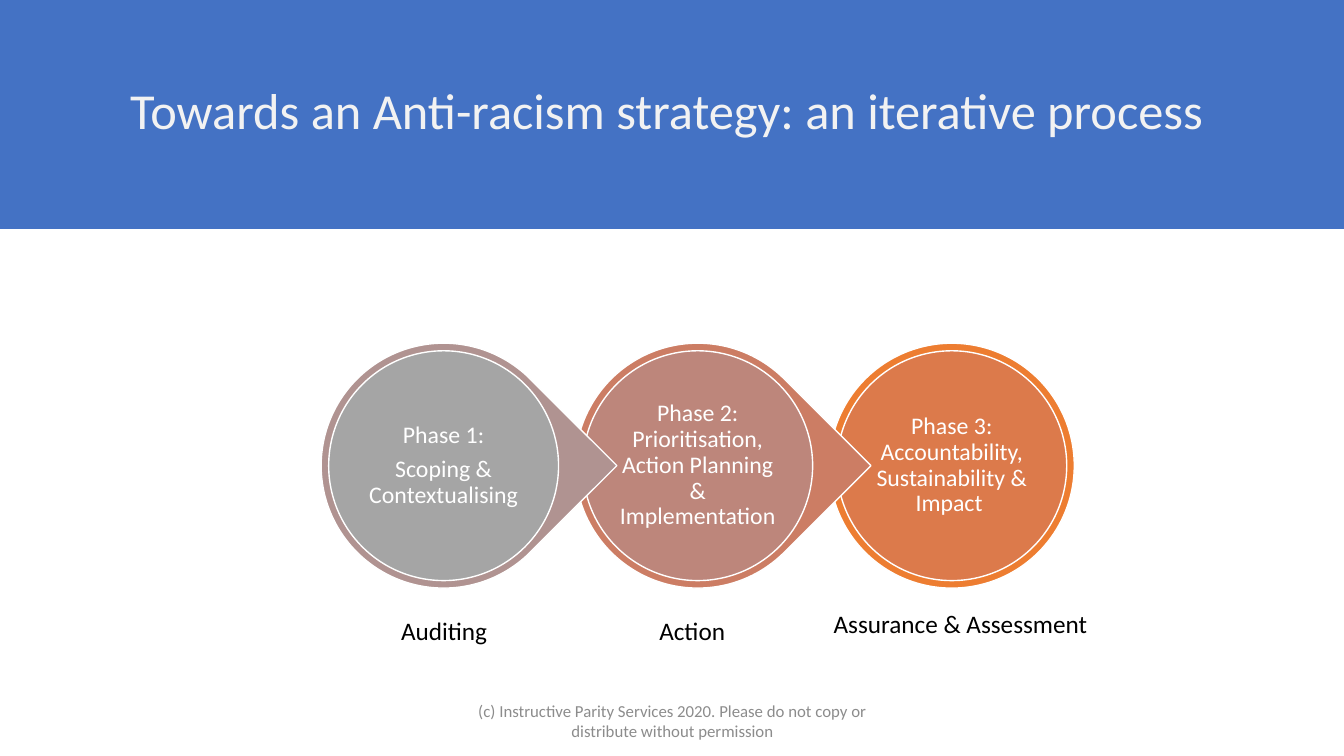
from pptx import Presentation
from pptx.dml.color import RGBColor
from pptx.enum.shapes import MSO_SHAPE
from pptx.enum.text import MSO_ANCHOR, PP_ALIGN
from pptx.util import Pt

RECTANGLE, ELLIPSE, TEARDROP = MSO_SHAPE.RECTANGLE, MSO_SHAPE.OVAL, MSO_SHAPE.TEAR
TOP, MIDDLE = MSO_ANCHOR.TOP, MSO_ANCHOR.MIDDLE
LEFT, CENTER = PP_ALIGN.LEFT, PP_ALIGN.CENTER

BLUE = RGBColor(0x44, 0x72, 0xC4)
OFF_WHITE = RGBColor(0xF2, 0xF2, 0xF2)
WHITE = RGBColor(0xFF, 0xFF, 0xFF)
BLACK = RGBColor(0x00, 0x00, 0x00)
GREY = RGBColor(0x8C, 0x8C, 0x8C)

TITLE = "Towards an Anti-racism strategy: an iterative process "
NOTICE = "(c) Instructive Parity Services 2020. Please do not copy or distribute without permission"
PHASES = [
    (["Phase 1:", "Scoping & Contextualising"], TEARDROP,
     RGBColor(0xB0, 0x93, 0x91), RGBColor(0xA5, 0xA5, 0xA5)),
    (["Phase 2: Prioritisation, Action Planning & Implementation"], TEARDROP,
     RGBColor(0xCC, 0x7D, 0x64), RGBColor(0xBD, 0x86, 0x7B)),
    (["Phase 3: Accountability, Sustainability & Impact "], ELLIPSE,
     RGBColor(0xED, 0x7D, 0x31), RGBColor(0xDC, 0x7A, 0x4B)),
]
CAPTIONS = [
    ("Auditing", (388, 606, 123, 40), True),
    ("Action", (644, 606, 92, 40), False),
    ("Assurance & Assessment", (817, 599, 274, 40), False),
]

EMU_PER_PX = 9144
SLIDE_SIZE = (1333, 750)
BAND_BOX = (0, -1, 1333, 228)
TITLE_BOX = (92, 40, 1150, 145)
NOTICE_BOX = (442, 695, 450, 40)
FIRST_CENTER, CENTER_STEP, CENTER_Y = 440, 252, 462
RING, DISC, LABEL = 243, 228, 163

TITLE_FORMAT = {"size": Pt(36), "name": "Calibri", "color": OFF_WHITE}
PHASE_FORMAT = {"size": Pt(17), "name": "Calibri", "color": WHITE}
NOTICE_FORMAT = {"size": Pt(12), "name": "Calibri", "color": GREY}
CAPTION_FORMAT = {"size": Pt(18), "name": "Calibri", "color": BLACK}
PHASE_PARAGRAPH = {"alignment": CENTER, "line_spacing": 0.9, "space_after": Pt(6)}
PHASE_MARGINS = dict.fromkeys(
    ["margin_left", "margin_top", "margin_right", "margin_bottom"], 2 * EMU_PER_PX)


def emu(box):
    return [px * EMU_PER_PX for px in box]


def square(center_x, side):
    return center_x - side / 2, CENTER_Y - side / 2, side, side


def set_all(target, values):
    for name, value in values.items():
        setattr(target, name, value)


def write(frame, lines, font_format, paragraph_format, frame_format):
    set_all(frame, frame_format)
    for index, line in enumerate(lines):
        paragraph = frame.add_paragraph() if index else frame.paragraphs[0]
        set_all(paragraph, paragraph_format)
        run = paragraph.add_run()
        run.text = line
        for name, value in font_format.items():
            if name == "color":
                run.font.color.rgb = value
            else:
                setattr(run.font, name, value)


def add_filled(slide, preset, box, fill, outline=None):
    figure = slide.shapes.add_shape(preset, *[int(length) for length in emu(box)])
    figure.shadow.inherit = False
    figure.fill.solid()
    figure.fill.fore_color.rgb = fill
    if outline is None:
        figure.line.fill.background()
    else:
        figure.line.color.rgb = outline
        figure.line.width = Pt(1)
    return figure


def add_label(slide, box, *content):
    label = slide.shapes.add_textbox(*[int(length) for length in emu(box)])
    write(label.text_frame, *content)


def add_phase(slide, center_x, lines, ring_preset, ring_color, disc_color):
    ring = add_filled(slide, ring_preset, square(center_x, RING), ring_color, WHITE)
    if ring_preset == TEARDROP:
        ring.rotation = 45
    add_filled(slide, ELLIPSE, square(center_x, DISC), disc_color, WHITE)
    add_label(slide, square(center_x, LABEL), lines, PHASE_FORMAT, PHASE_PARAGRAPH,
              {"word_wrap": True, "vertical_anchor": MIDDLE, **PHASE_MARGINS})


def main():
    deck = Presentation()
    deck.slide_width, deck.slide_height = emu(SLIDE_SIZE)
    slide = deck.slides.add_slide(deck.slide_layouts[5])

    title = slide.shapes.title
    set_all(title, dict(zip(["left", "top", "width", "height"], emu(TITLE_BOX))))
    write(title.text_frame, [TITLE], TITLE_FORMAT,
          {"alignment": CENTER, "line_spacing": 0.9},
          {"word_wrap": True, "vertical_anchor": MIDDLE})
    band = add_filled(slide, RECTANGLE, BAND_BOX, BLUE)
    title.element.addprevious(band.element)

    for index, phase in reversed(list(enumerate(PHASES))):
        add_phase(slide, FIRST_CENTER + index * CENTER_STEP, *phase)

    add_label(slide, NOTICE_BOX, [NOTICE], NOTICE_FORMAT, {"alignment": CENTER},
              {"word_wrap": True, "vertical_anchor": MIDDLE})
    for caption, box, wraps in CAPTIONS:
        add_label(slide, box, [caption], CAPTION_FORMAT, {"alignment": LEFT},
                  {"word_wrap": wraps, "vertical_anchor": TOP})

    deck.save("out.pptx")


if __name__ == "__main__":
    main()
